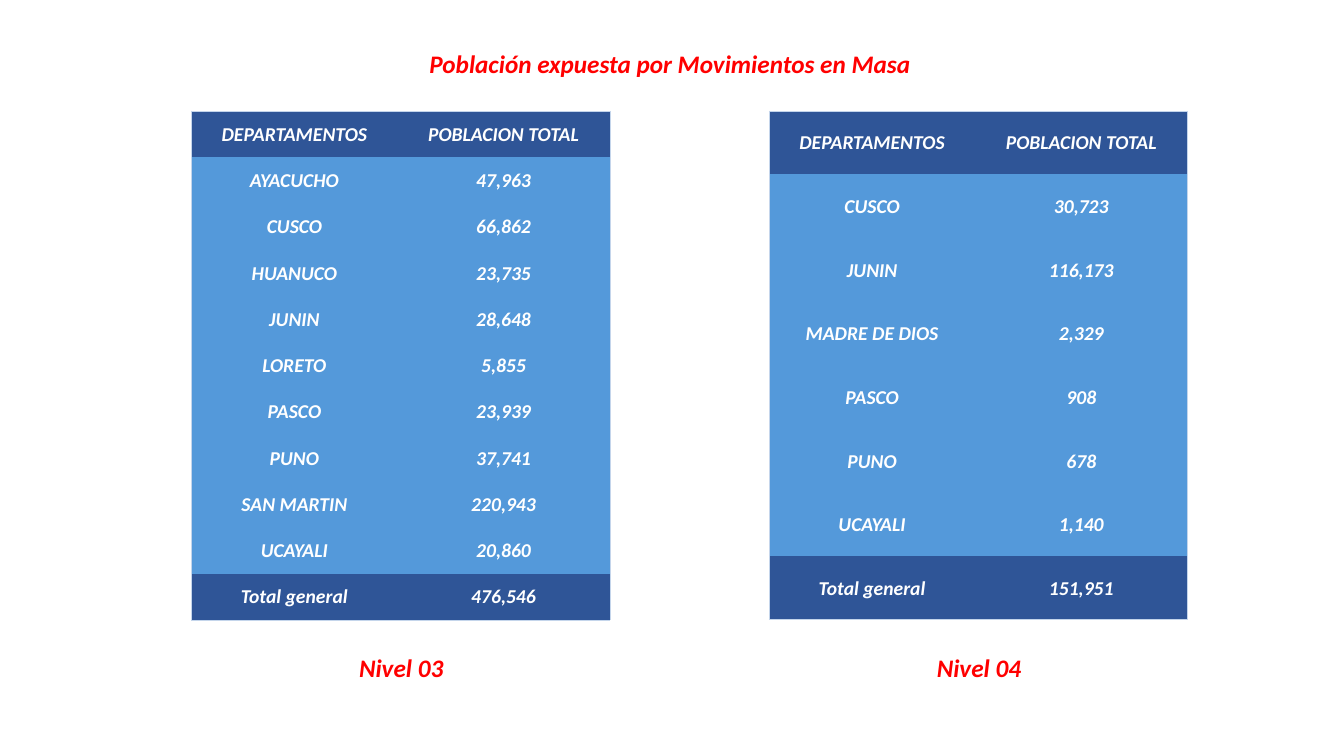
from lxml.etree import SubElement
from pptx import Presentation
from pptx.dml.color import RGBColor
from pptx.enum.text import MSO_ANCHOR, MSO_AUTO_SIZE, PP_ALIGN
from pptx.oxml.ns import qn
from pptx.util import Inches, Pt

RED = RGBColor(0xFF, 0x00, 0x00)
WHITE = RGBColor(0xFF, 0xFF, 0xFF)
NAVY = RGBColor(0x2F, 0x55, 0x97)
BLUE = RGBColor(0x54, 0x99, 0xDA)
PALE_BLUE = RGBColor(0xC4, 0xD5, 0xEB)

PLAIN_TABLE_STYLE = "{2D5ABB26-0587-4C30-8999-92F81FD0307C}"
HEADER = ("DEPARTAMENTOS", "POBLACION TOTAL")
TABLE_TOP, TABLE_HEIGHT = 1.1, 5.05
COLUMN_WIDTHS = (2.04, 2.11)

LEVEL_3 = [
    ("AYACUCHO", "47,963"),
    ("CUSCO", "66,862"),
    ("HUANUCO", "23,735"),
    ("JUNIN", "28,648"),
    ("LORETO", "5,855"),
    ("PASCO", "23,939"),
    ("PUNO", "37,741"),
    ("SAN MARTIN", "220,943"),
    ("UCAYALI", "20,860"),
    ("Total general", "476,546"),
]
LEVEL_4 = [
    ("CUSCO", "30,723"),
    ("JUNIN", "116,173"),
    ("MADRE DE DIOS", "2,329"),
    ("PASCO", "908"),
    ("PUNO", "678"),
    ("UCAYALI", "1,140"),
    ("Total general", "151,951"),
]


class PopulationPage:
    font = "Calibri"
    heading_size = Pt(18)
    cell_size = Pt(14)

    def __init__(self, deck):
        self.page = deck.slides.add_slide(deck.slide_layouts[5])

    def set_text(self, frame, text, size, color):
        frame.text = text
        para = frame.paragraphs[0]
        para.alignment = PP_ALIGN.CENTER
        font = para.runs[0].font
        font.name, font.size, font.color.rgb = self.font, size, color
        font.bold = font.italic = True

    def title(self, text, left, top, width, height):
        box = self.page.shapes.title
        box.left, box.top = Inches(left), Inches(top)
        box.width, box.height = Inches(width), Inches(height)
        frame = box.text_frame
        self.set_text(frame, text, self.heading_size, RED)
        frame.word_wrap = False
        frame.auto_size = MSO_AUTO_SIZE.SHAPE_TO_FIT_TEXT
        frame.vertical_anchor = MSO_ANCHOR.TOP

    def caption(self, text, left, top, width, height):
        box = self.page.shapes.add_textbox(
            Inches(left), Inches(top), Inches(width), Inches(height))
        frame = box.text_frame
        frame.word_wrap = True
        frame.auto_size = MSO_AUTO_SIZE.SHAPE_TO_FIT_TEXT
        self.set_text(frame, text, self.heading_size, RED)

    def border(self, cell, side):
        line = SubElement(cell._tc.get_or_add_tcPr(), qn(f"a:ln{side}"), w=str(Pt(0.5)))
        fill = SubElement(line, qn("a:solidFill"))
        SubElement(fill, qn("a:srgbClr"), val=str(PALE_BLUE))

    def table(self, rows, left):
        frame = self.page.shapes.add_table(
            len(rows), len(HEADER), Inches(left), Inches(TABLE_TOP),
            Inches(sum(COLUMN_WIDTHS)), Inches(TABLE_HEIGHT))
        table = frame.table
        table.horz_banding = False
        frame._element.find(".//" + qn("a:tableStyleId")).text = PLAIN_TABLE_STYLE
        for column, width in zip(table.columns, COLUMN_WIDTHS):
            column.width = Inches(width)
        last_row, last_column = len(rows) - 1, len(HEADER) - 1
        for r, values in enumerate(rows):
            table.rows[r].height = Inches(TABLE_HEIGHT / len(rows))
            for c, value in enumerate(values):
                cell = table.cell(r, c)
                self.set_text(cell.text_frame, value, self.cell_size, WHITE)
                cell.vertical_anchor = MSO_ANCHOR.MIDDLE
                cell.margin_left = cell.margin_right = cell.margin_top = Inches(0.01)
                cell.margin_bottom = 0
                # Only the outer edge of the table is lined
                edges = {"L": c == 0, "R": c == last_column,
                         "T": r == 0, "B": r == last_row}
                for side, outer in edges.items():
                    if outer:
                        self.border(cell, side)
                cell.fill.solid()
                cell.fill.fore_color.rgb = NAVY if r in (0, last_row) else BLUE


def main():
    deck = Presentation()
    deck.slide_width, deck.slide_height = Inches(13.33), Inches(7.5)
    page = PopulationPage(deck)

    # Heading
    page.title("Población expuesta por Movimientos en Masa", 4.13, 0.43, 5.03, 0.4)

    # One table and caption for each level
    for name, rows, left in (("Nivel 03", LEVEL_3, 1.9), ("Nivel 04", LEVEL_4, 7.63)):
        page.table([HEADER] + rows, left)
        page.caption(name, left + 1.53, 6.42, 1.1, 0.4)

    deck.save("out.pptx")


if __name__ == "__main__":
    main()
